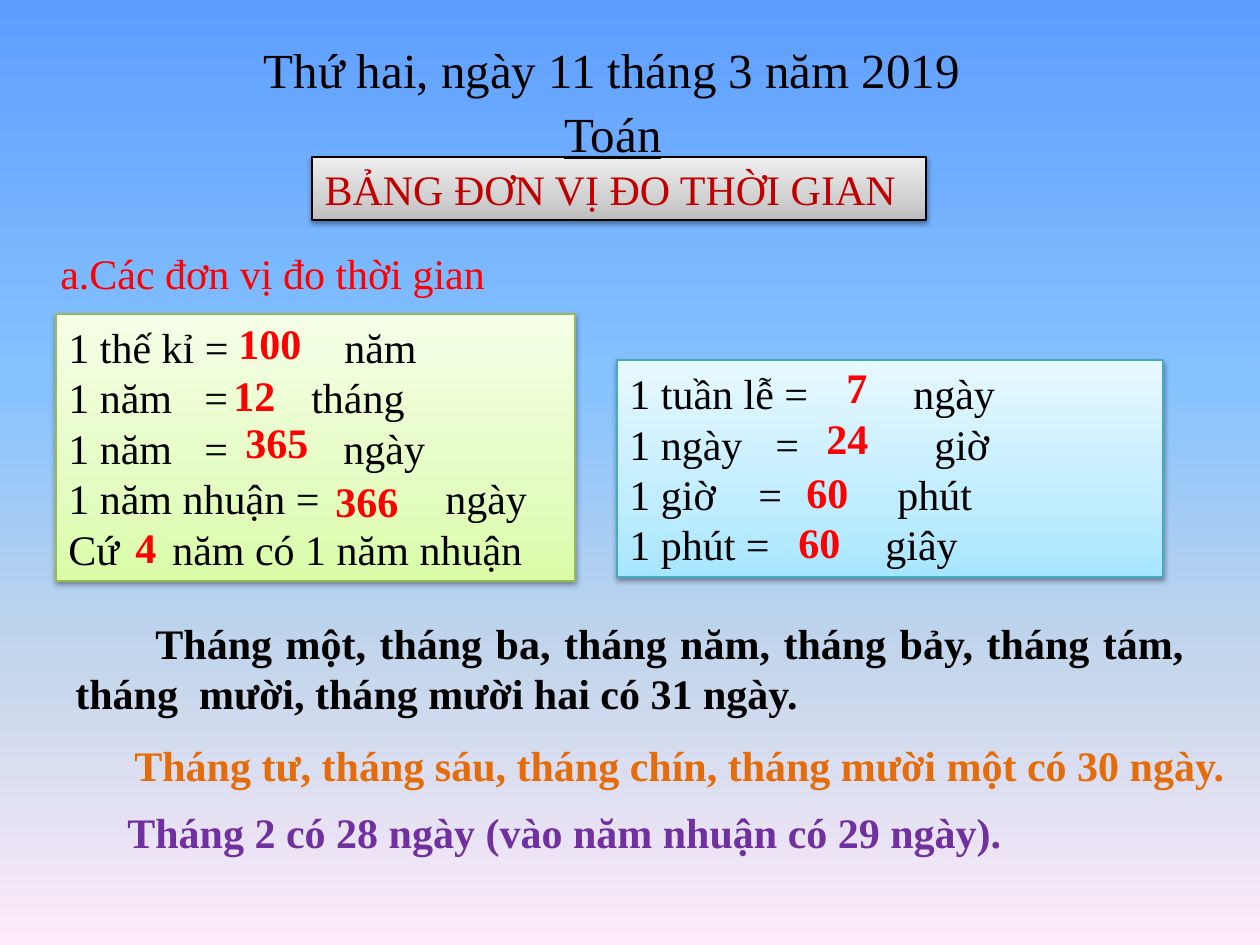
from lxml import etree
from pptx import Presentation
from pptx.dml.color import RGBColor
from pptx.enum.shapes import MSO_SHAPE
from pptx.enum.text import MSO_ANCHOR, MSO_AUTO_SIZE, PP_ALIGN
from pptx.oxml.ns import qn
from pptx.util import Pt

PX = 914400 // 126
FONT = "Times New Roman"
RECT = MSO_SHAPE.RECTANGLE
TOP, MIDDLE = MSO_ANCHOR.TOP, MSO_ANCHOR.MIDDLE
NO_FIT = MSO_AUTO_SIZE.NONE
LEFT, CENTER, JUSTIFY = PP_ALIGN.LEFT, PP_ALIGN.CENTER, PP_ALIGN.JUSTIFY
UPWARD, DOWNWARD = 90, 270

COLORS = {
    "black": "000000", "red": "FF0000", "dark_red": "C00000",
    "orange": "E46C0A", "purple": "7030A0",
    "green_line": "98B955", "blue_line": "46AAC5",
}
GRADIENTS = {
    "sky": [(0, "5E9EFF"), (40, "85C2FF"), (70, "C4D6EB"), (100, "FFEBFA")],
    "gray": [(0, "BDBDBD"), (35, "D1D1D1"), (100, "EEEEEE")],
    "green": [(0, "DAFDA7"), (35, "E4FCC2"), (100, "F5FFE7")],
    "blue": [(0, "A7E6FF"), (35, "C1EDFF"), (100, "E7F8FF")],
}

YEAR_ROWS = [
    ("1 thế kỉ =\tnăm", [276]),
    ("1 năm\t=\ttháng", [136, 243]),
    ("1 năm\t=\tngày", [136, 275]),
    ("1 năm nhuận =\tngày", [377]),
    ("Cứ\tnăm có 1 năm nhuận", [104]),
]
DAY_ROWS = [
    ("1 tuần lễ =\tngày", [284]),
    ("1 ngày\t=\tgiờ", [146, 305]),
    ("1 giờ\t=\tphút", [129, 268]),
    ("1 phút =\tgiây", [256]),
]
ANSWERS = [
    ("100", 226, 311, 110), ("12", 221, 363, 107), ("365", 233, 410, 107),
    ("366", 323, 469, 100), ("4", 123, 515, 43), ("7", 834, 355, 40),
    ("24", 814, 406, 82), ("60", 794, 460, 89), ("60", 786, 510, 89),
]


def rgb(name):
    return RGBColor.from_string(COLORS[name])


def set_gradient(fill, element, name, angle):
    fill.gradient()
    fill.gradient_angle = angle
    stops = element.xpath(".//a:gsLst")[0]
    for stop in list(stops):
        stops.remove(stop)
    for pos, color in GRADIENTS[name]:
        gs = etree.SubElement(stops, qn("a:gs"), pos=str(pos * 1000))
        etree.SubElement(gs, qn("a:srgbClr"), val=color)


def add_shadow(sp):
    sp.shadow.inherit = False
    effects = sp._element.spPr.find(qn("a:effectLst"))
    shadow = etree.SubElement(effects, qn("a:outerShdw"), blurRad="40000",
                              dist="20000", dir="5400000", rotWithShape="0")
    color = etree.SubElement(shadow, qn("a:srgbClr"), val=COLORS["black"])
    etree.SubElement(color, qn("a:alpha"), val="38000")


def style_panel(sp, gradient, line):
    set_gradient(sp.fill, sp._element.spPr, gradient, UPWARD)
    sp.line.color.rgb = rgb(line)
    sp.line.width = Pt(0.75)
    add_shadow(sp)


def write(sp, text, color, size=24, bold=False, underline=False, align=LEFT,
          anchor=TOP):
    tf = sp.text_frame
    tf.word_wrap = True
    tf.auto_size = NO_FIT
    tf.vertical_anchor = anchor
    tf.text = text
    for p in tf.paragraphs:
        p.alignment = align
        for r in p.runs:
            r.font.name = FONT
            r.font.size = Pt(size)
            r.font.bold = bold
            r.font.underline = underline
            r.font.color.rgb = rgb(color)


def add_title(slide, text, x, y, w, h):
    sp = slide.shapes.title
    sp.left, sp.top, sp.width, sp.height = (v * PX for v in (x, y, w, h))
    style_panel(sp, "gray", "black")
    write(sp, text, "dark_red", anchor=MIDDLE)


def add_text(slide, text, x, y, w, h, color, **style):
    sp = slide.shapes.add_textbox(x * PX, y * PX, w * PX, h * PX)
    write(sp, text, color, **style)
    return sp.text_frame.paragraphs[0]


def add_panel(slide, rows, x, y, w, h, gradient, line):
    sp = slide.shapes.add_shape(RECT, x * PX, y * PX, w * PX, h * PX)
    style_panel(sp, gradient, line)
    write(sp, "\n".join(text for text, _ in rows), "black", anchor=MIDDLE)
    for p, (_, tabs) in zip(sp.text_frame.paragraphs, rows):
        tab_list = etree.SubElement(p._p.get_or_add_pPr(), qn("a:tabLst"))
        for pos in tabs:
            etree.SubElement(tab_list, qn("a:tab"), pos=str(pos * PX), algn="l")


def main():
    prs = Presentation()
    prs.slide_width, prs.slide_height = 1260 * PX, 945 * PX
    slide = prs.slides.add_slide(prs.slide_layouts[5])
    set_gradient(slide.background.fill, slide.element, "sky", DOWNWARD)

    add_title(slide, "BẢNG ĐƠN VỊ ĐO THỜI GIAN", 312, 157, 614, 63)
    add_panel(slide, YEAR_ROWS, 56, 314, 519, 267, "green", "green_line")
    add_panel(slide, DAY_ROWS, 617, 360, 546, 217, "blue", "blue_line")
    add_text(slide, "a.Các đơn vị đo thời gian", 48, 241, 454, 63, "red")
    for text, x, y, w in ANSWERS:
        add_text(slide, text, x, y, w, 63, "red", bold=True)

    p = add_text(slide, "Tháng một, tháng ba, tháng năm, tháng bảy, tháng tám, "
                 "tháng  mười, tháng mười hai có 31 ngày.",
                 63, 611, 1133, 115, "black", bold=True, align=JUSTIFY)
    p._p.get_or_add_pPr().set("indent", str(80 * PX))
    p = add_text(slide, "Tháng tư, tháng sáu, tháng chín, tháng mười một có 30 ngày.",
                 122, 721, 1124, 77, "orange", bold=True, align=JUSTIFY)
    p.line_spacing = 1.25
    add_text(slide, "Tháng 2 có 28 ngày (vào năm nhuận có 29 ngày).",
             115, 800, 942, 63, "purple", bold=True)
    add_text(slide, "Thứ hai, ngày 11 tháng 3 năm 2019", 205, 33, 814, 72,
             "black", size=28, align=CENTER)
    p = add_text(slide, "Toán", 503, 97, 189, 72, "black", size=28, underline=True)
    p._p.get_or_add_pPr().set("marL", str(49 * PX))

    prs.save("out.pptx")


if __name__ == "__main__":
    main()
